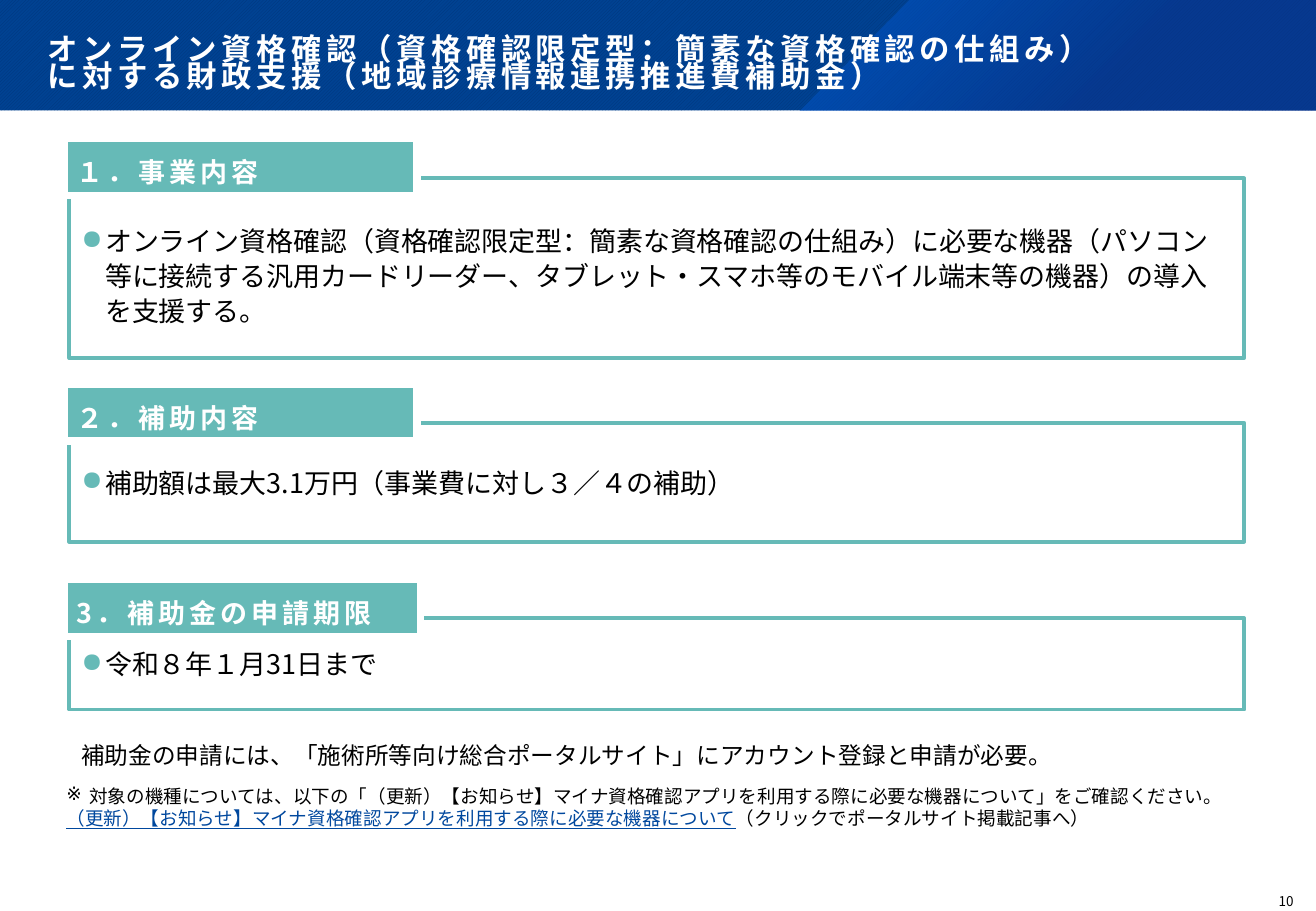
from lxml.etree import SubElement
from pptx import Presentation
from pptx.dml.color import RGBColor
from pptx.enum.dml import MSO_PATTERN
from pptx.enum.shapes import MSO_SHAPE
from pptx.enum.text import MSO_ANCHOR, PP_ALIGN
from pptx.oxml import parse_xml
from pptx.oxml.ns import nsdecls, qn
from pptx.util import Cm, Pt

WHITE = RGBColor(0xFF, 0xFF, 0xFF)
BLACK = RGBColor(0, 0, 0)
TEAL = RGBColor(0x66, 0xBA, 0xB7)
LINK = RGBColor(0x00, 0x48, 0x9E)
NAVY = RGBColor(0x00, 0x35, 0x79)
BLUE = RGBColor(0x00, 0x42, 0x92)
FONT = "Noto Sans CJK JP"
WIDTH, BAND = 27.51, 2.31

GLOW = f"""<a:gradFill {nsdecls('a')} rotWithShape="1"><a:gsLst>
<a:gs pos="0"><a:srgbClr val="0064DF"><a:alpha val="50000"/></a:srgbClr></a:gs>
<a:gs pos="62000"><a:srgbClr val="0C338E"><a:alpha val="55000"/></a:srgbClr></a:gs>
</a:gsLst><a:path path="circle"><a:fillToRect r="100000" b="100000"/></a:path></a:gradFill>"""


class Page:
    def __init__(self, slide):
        self.slide = slide
        self.shapes = slide.shapes

    def band(self):
        bar = self.shapes.add_shape(MSO_SHAPE.RECTANGLE, 0, 0, Cm(WIDTH), Cm(BAND))
        bar.shadow.inherit = False
        bar.line.fill.background()
        bar.fill.patterned()
        bar.fill.pattern = MSO_PATTERN.DARK_UPWARD_DIAGONAL
        bar.fill.fore_color.rgb = NAVY
        bar.fill.back_color.rgb = BLUE

    def glow(self):
        """Draw the translucent slanted panel at the right of the band."""
        pen = self.shapes.build_freeform(Cm(19.02), 0)
        corners = [(WIDTH, 0), (WIDTH, BAND), (16.71, BAND)]
        pen.add_line_segments([(Cm(x), Cm(y)) for x, y in corners], close=True)
        panel = pen.convert_to_shape()
        panel.shadow.inherit = False
        panel.line.fill.background()
        panel.fill.background()
        props = panel._element.spPr
        props.replace(props.find(qn("a:noFill")), parse_xml(GLOW))

    def shape(self, kind, area, line, weight, fill=None):
        item = self.shapes.add_shape(kind, *map(Cm, area))
        item.shadow.inherit = False
        item.line.color.rgb = line
        item.line.width = Pt(weight)
        if fill is None:
            item.fill.background()
        else:
            item.fill.solid()
            item.fill.fore_color.rgb = fill
        return item

    def label(self, area, anchor=MSO_ANCHOR.TOP, pads=(0.25, 0.13, 0.25, 0.13)):
        item = self.shapes.add_textbox(*map(Cm, area))
        self.frame(item, anchor, pads)
        return item

    def frame(self, item, anchor, pads):
        text = item.text_frame
        text.word_wrap = True
        text.vertical_anchor = anchor
        (text.margin_left, text.margin_top,
         text.margin_right, text.margin_bottom) = map(Cm, pads)

    def para(self, item, first=True, align=PP_ALIGN.LEFT, space=None):
        text = item.text_frame
        para = text.paragraphs[0] if first else text.add_paragraph()
        para.alignment = align
        if space:
            para.line_spacing = space
        return para

    def bullet(self, para, mark, indent, color=None):
        props = para._p.get_or_add_pPr()
        props.set("marL", str(Cm(indent)))
        props.set("indent", str(-Cm(indent)))
        if color is not None:
            tint = SubElement(props, qn("a:buClr"))
            SubElement(tint, qn("a:srgbClr")).set("val", str(color))
        SubElement(props, qn("a:buChar")).set("char", mark)

    def run(self, para, words, size, color=BLACK, bold=False, track=0, under=False):
        run = para.add_run()
        run.text = words
        font = run.font
        font.size, font.bold, font.underline = Pt(size), bold, under
        font.name = FONT
        font.color.rgb = color
        props = run._r.get_or_add_rPr()
        SubElement(props, qn("a:ea")).set("typeface", FONT)
        if track:
            props.set("spc", str(int(track * 100)))

    def section(self, head, body, top, tall, lift, wide=7.37, drop=0.13, space=None):
        """Draw an outlined box with a teal heading over its top left corner."""
        box = self.shape(MSO_SHAPE.RECTANGLE, (1.45, top, 24.56, tall), TEAL, 2.25)
        self.frame(box, MSO_ANCHOR.MIDDLE, (0.25, drop, 0.2, 0.13))
        para = self.para(box, space=space)
        self.bullet(para, "●", 0.5, TEAL)
        self.run(para, body, 16)

        tab = self.shape(MSO_SHAPE.ROUNDED_RECTANGLE, (1.35, lift, wide, 1.19),
                         WHITE, 4.5, TEAL)
        tab.adjustments[0] = 0
        self.frame(tab, MSO_ANCHOR.MIDDLE, (0.25, 0.13, 0.25, 0.13))
        para = self.para(tab, space=1.3)
        para.space_after = Pt(8)
        self.run(para, head, 16, WHITE, True, 2.4)


def main():
    deck = Presentation()
    deck.slide_width, deck.slide_height = Cm(WIDTH), Cm(19.05)
    page = Page(deck.slides.add_slide(deck.slide_layouts[6]))

    page.band()
    page.glow()
    title = page.label((0, 0, WIDTH, BAND), MSO_ANCHOR.BOTTOM, (0.99, 0, 0.91, 0.36))
    para = page.para(title, space=0.75)
    page.run(para, "オンライン資格確認（資格確認限定型：簡素な資格確認の仕組み）",
             18, WHITE, True, 2.7)
    para.add_line_break()
    page.run(para, "に対する財政支援（地域診療情報連携推進費補助金）", 18, WHITE, True, 2.7)

    page.section("１．事業内容",
                 "オンライン資格確認（資格確認限定型：簡素な資格確認の仕組み）に必要な機器"
                 "（パソコン等に接続する汎用カードリーダー、タブレット・スマホ等のモバイル端末等の機器）"
                 "の導入を支援する。",
                 3.73, 3.76, 2.9, drop=0.4, space=1.07)
    page.section("２．補助内容", "補助額は最大3.1万円（事業費に対し３／４の補助）",
                 8.84, 2.49, 8.03)
    page.section("3．補助金の申請期限", "令和８年１月31日まで",
                 12.93, 1.91, 12.12, wide=7.44)

    note = page.label((1.45, 15.37, 24.23, 0.86))
    page.run(page.para(note),
             "補助金の申請には、「施術所等向け総合ポータルサイト」にアカウント登録と申請が必要。", 14)

    foot = page.label((1.14, 16.28, 25.12, 1.19))
    notice = "（更新）【お知らせ】マイナ資格確認アプリを利用する際に必要な機器について"
    para = page.para(foot)
    page.bullet(para, "※", 0.48)
    page.run(para, f"対象の機種については、以下の「{notice}」をご確認ください。", 11)
    para = page.para(foot, first=False)
    page.run(para, notice, 11, LINK, under=True)
    page.run(para, "（クリックでポータルサイト掲載記事へ）", 11)

    number = page.label((26.34, 18.57, 1.09, 0.48), MSO_ANCHOR.MIDDLE, (0, 0.08, 0, 0))
    page.run(page.para(number, align=PP_ALIGN.CENTER), "10", 8)
    deck.save("out.pptx")


if __name__ == "__main__":
    main()
